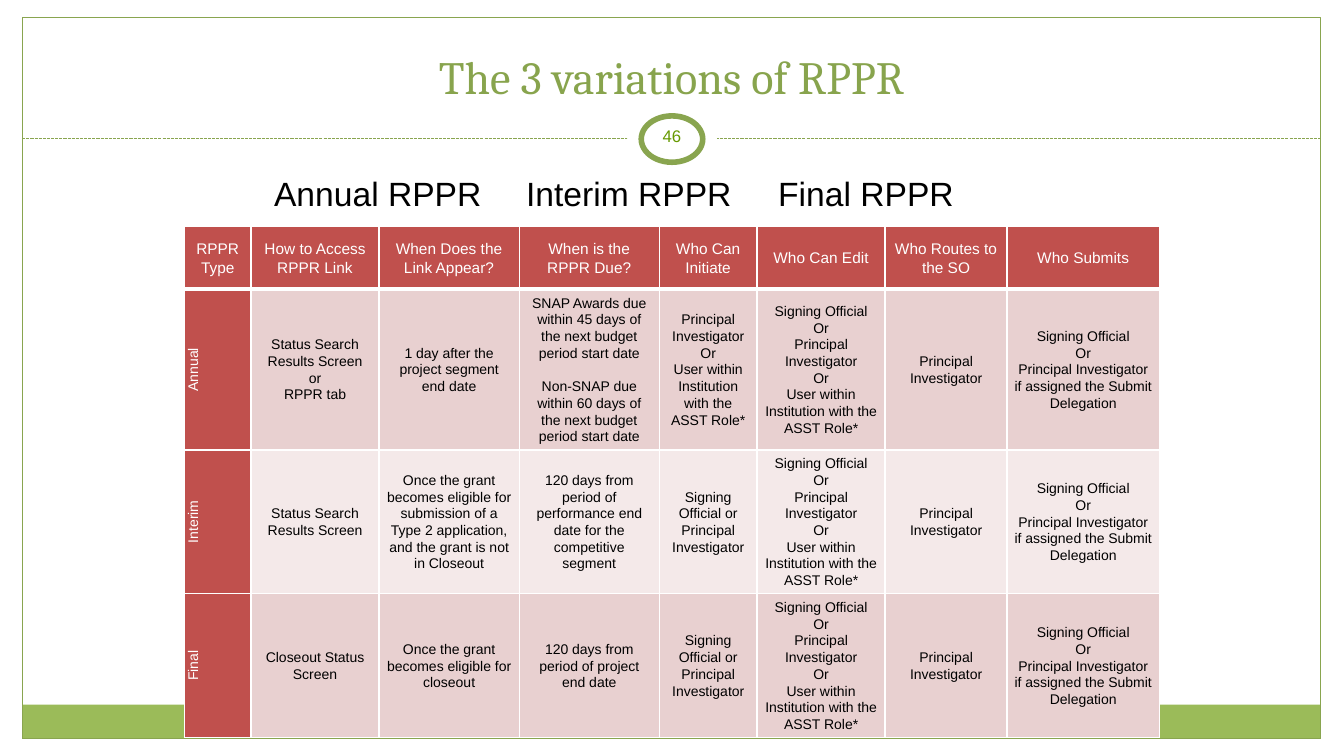
from lxml.etree import SubElement
from pptx import Presentation
from pptx.dml.color import RGBColor
from pptx.enum.dml import MSO_LINE
from pptx.enum.shapes import MSO_CONNECTOR, MSO_SHAPE
from pptx.enum.text import MSO_ANCHOR, PP_ALIGN
from pptx.oxml.ns import qn
from pptx.util import Inches, Pt

GREEN, RED, WHITE, BLACK = "89A54F", "C0504D", "FFFFFF", "000000"
BAND_FILLS = ["E8D0D0", "F4E9E9"]
COLUMN_WIDTHS = [0.66, 1.27, 1.39, 1.39, 0.97, 1.27, 1.21, 1.51]
ROW_HEIGHTS = [0.62, 1.59, 1.41, 1.41]

HEADERS = ["RPPR Type", "How to Access RPPR Link", "When Does the Link Appear?",
           "When is the RPPR Due?", "Who Can Initiate", "Who Can Edit",
           "Who Routes to the SO", "Who Submits"]
ASSISTANT = "User within Institution with the ASST Role*"
INVESTIGATOR = "Principal Investigator"
OFFICIAL_OR_INVESTIGATOR = "Signing Official or Principal Investigator"
# The last three columns read the same for every RPPR type.
SHARED_CELLS = [
    f"Signing Official\nOr\n{INVESTIGATOR}\nOr\n{ASSISTANT}",
    INVESTIGATOR,
    "Signing Official\nOr\nPrincipal Investigator if assigned the Submit Delegation",
]
RPPR_TYPES = [
    ["Annual", "Status Search Results Screen\nor\nRPPR tab",
     "1 day after the project segment end date",
     "SNAP Awards due within 45 days of the next budget period start date\n"
     "Non-SNAP due within 60 days of the next budget period start date",
     f"{INVESTIGATOR}\nOr\n{ASSISTANT}"],
    ["Interim", "Status Search Results Screen",
     "Once the grant becomes eligible for submission of a Type 2 application, "
     "and the grant is not in Closeout",
     "120 days from period of performance end date for the competitive segment",
     OFFICIAL_OR_INVESTIGATOR],
    ["Final", "Closeout Status Screen",
     "Once the grant becomes eligible for closeout",
     "120 days from period of project end date",
     OFFICIAL_OR_INVESTIGATOR],
]


def color(hex_string):
    return RGBColor.from_string(hex_string)


def place(shape, left, top, width, height):
    shape.left, shape.top = Inches(left), Inches(top)
    shape.width, shape.height = Inches(width), Inches(height)


def style_paragraph(paragraph, size, hex_color, font="Arial", align=PP_ALIGN.CENTER):
    paragraph.alignment = align
    paragraph.font.size = Pt(size)
    paragraph.font.name = font
    paragraph.font.color.rgb = color(hex_color)


def add_plain_shape(slide, kind, box, fill=None, line=None, line_width=0.75):
    shape = slide.shapes.add_shape(kind, *map(Inches, box))
    shape.shadow.inherit = False
    if fill:
        shape.fill.solid()
        shape.fill.fore_color.rgb = color(fill)
    else:
        shape.fill.background()
    if line:
        shape.line.color.rgb = color(line)
        shape.line.width = Pt(line_width)
    else:
        shape.line.fill.background()


def add_dashed_rule(slide, left, right, y):
    rule = slide.shapes.add_connector(
        MSO_CONNECTOR.STRAIGHT, Inches(left), Inches(y), Inches(right), Inches(y))
    rule.line.color.rgb = color(GREEN)
    rule.line.width = Pt(0.75)
    rule.line.dash_style = MSO_LINE.SQUARE_DOT
    SubElement(rule._element.spPr, qn("a:effectLst"))


def add_text(slide, box, text, size, hex_color, align):
    frame = slide.shapes.add_textbox(*map(Inches, box)).text_frame
    frame.word_wrap = True
    frame.text = text
    style_paragraph(frame.paragraphs[0], size, hex_color, align=align)


def add_title(slide, text):
    title = slide.shapes.title
    place(title, 0.44, 0.25, 12.44, 0.83)
    title.text_frame.text = text
    title.text_frame.vertical_anchor = MSO_ANCHOR.BOTTOM
    style_paragraph(title.text_frame.paragraphs[0], 33, "88A44D", "Cambria")


def add_cell_borders(cell, bottom_width):
    properties = cell._tc.get_or_add_tcPr()
    for side, width in (("L", 1), ("R", 1), ("T", 1), ("B", bottom_width)):
        border = SubElement(properties, qn(f"a:ln{side}"), w=str(Pt(width)))
        fill = SubElement(border, qn("a:solidFill"))
        SubElement(fill, qn("a:srgbClr"), val=WHITE)


def fill_cell(cell, text, size, text_color, fill, margins, bottom_width=1):
    add_cell_borders(cell, bottom_width)
    cell.fill.solid()
    cell.fill.fore_color.rgb = color(fill)
    cell.vertical_anchor = MSO_ANCHOR.MIDDLE
    side, edge = map(Inches, margins)
    cell.margin_left = cell.margin_right = side
    cell.margin_top = cell.margin_bottom = edge
    cell.text_frame.text = text
    for paragraph in cell.text_frame.paragraphs:
        style_paragraph(paragraph, size, text_color)
        paragraph.line_spacing = 1.07
        if paragraph.text.startswith("Non-SNAP"):
            paragraph.space_before = Pt(12)


def add_rppr_table(slide):
    table = slide.shapes.add_table(
        len(ROW_HEIGHTS), len(COLUMN_WIDTHS), Inches(1.83), Inches(2.25),
        Inches(sum(COLUMN_WIDTHS)), Inches(sum(ROW_HEIGHTS))).table
    for column, width in zip(table.columns, COLUMN_WIDTHS):
        column.width = Inches(width)
    for row, height in zip(table.rows, ROW_HEIGHTS):
        row.height = Inches(height)
    for cell, header in zip(table.rows[0].cells, HEADERS):
        fill_cell(cell, header, 11, WHITE, RED, (0.08, 0.02), bottom_width=3)
    for row_index, (name, *details) in enumerate(RPPR_TYPES, start=1):
        name_cell, *detail_cells = table.rows[row_index].cells
        fill_cell(name_cell, name, 10, WHITE, RED, (0.07, 0))
        name_cell._tc.get_or_add_tcPr().set("vert", "vert270")
        band = BAND_FILLS[(row_index - 1) % 2]
        for cell, text in zip(detail_cells, details + SHARED_CELLS):
            fill_cell(cell, text, 10, BLACK, band, (0.07, 0))


def main():
    presentation = Presentation()
    presentation.slide_width = Inches(13.33)
    presentation.slide_height = Inches(7.5)
    slide = presentation.slides.add_slide(presentation.slide_layouts[5])

    add_plain_shape(slide, MSO_SHAPE.RECTANGLE, (0.22, 6.99, 12.88, 0.34), fill="9BBB59")
    add_plain_shape(slide, MSO_SHAPE.RECTANGLE, (0.22, 0.17, 12.88, 7.16), line=GREEN)
    add_dashed_rule(slide, 0.22, 13.1, 1.37)
    add_plain_shape(slide, MSO_SHAPE.OVAL, (6.22, 1.05, 0.89, 0.67), fill=WHITE)
    add_plain_shape(slide, MSO_SHAPE.OVAL, (6.36, 1.15, 0.61, 0.46), WHITE, GREEN, 4)
    add_text(slide, (6.22, 1.2, 0.89, 0.3), "46", 12, "669900", PP_ALIGN.CENTER)
    add_title(slide, "The 3 variations of RPPR")
    add_text(slide, (2.62, 1.67, 8.08, 0.5), "Annual RPPR\tInterim RPPR\tFinal RPPR",
             24, BLACK, PP_ALIGN.LEFT)
    add_rppr_table(slide)
    presentation.save("out.pptx")


if __name__ == "__main__":
    main()
